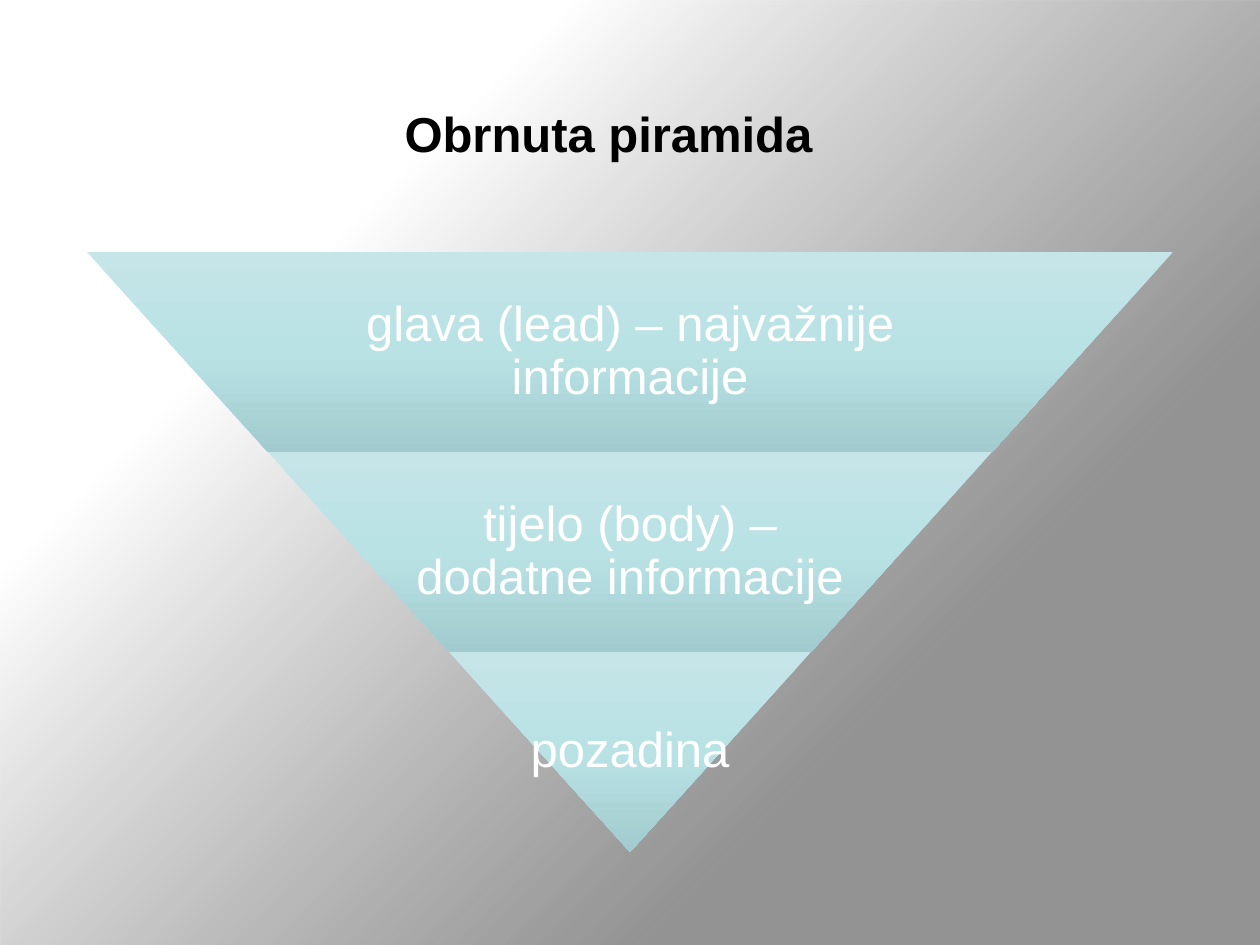
from lxml.etree import SubElement
from pptx import Presentation
from pptx.dml.color import RGBColor
from pptx.enum.shapes import MSO_SHAPE as Shape
from pptx.enum.text import MSO_ANCHOR as Anchor, MSO_AUTO_SIZE as AutoSize, PP_ALIGN as Align
from pptx.oxml.ns import qn
from pptx.util import Emu, Pt

COLORS = {
    "title": "000000",
    "label": "FFFFFF",
    "shade": "808080",
    "light": "FFFFFF",
    "band_top": "C5E5E8",
    "band_middle": "B9E2E5",
    "band_bottom": "A1CBCE",
}
WIDTH, HEIGHT = 1260, 945
BAND_TOP, BAND_HEIGHT, BAND_STEP = 252, 200, 181
BANDS = [
    ("glava (lead) – najvažnije informacije", 0.65),
    ("tijelo (body) – dodatne informacije", 0.65),
    ("pozadina", 1),
]


def px(length):
    return Emu(round(length * 914400 / 126))


class SlideBuilder:
    font = "Arial"
    size = Pt(28)

    def __init__(self, deck):
        self.slide = deck.slides.add_slide(deck.slide_layouts[5])

    def gradient(self, shape, stops):
        shape.shadow.inherit = False
        shape.line.fill.background()
        shape.fill.gradient()
        fill = shape._element.spPr.find(qn("a:gradFill"))
        for child in list(fill):
            fill.remove(child)
        stop_list = SubElement(fill, qn("a:gsLst"))
        for position, color, opacity in stops:
            stop = SubElement(stop_list, qn("a:gs"), pos=str(position * 1000))
            tone = SubElement(stop, qn("a:srgbClr"), val=COLORS[color])
            if opacity < 100:
                SubElement(tone, qn("a:alpha"), val=str(opacity * 1000))
        return fill

    def backdrop(self):
        panel = self.slide.shapes.add_shape(Shape.RECTANGLE, 0, 0, px(WIDTH), px(HEIGHT))
        fill = self.gradient(panel, [(28, "shade", 84), (74, "light", 100)])
        spread = SubElement(fill, qn("a:path"), path="circle")
        SubElement(spread, qn("a:fillToRect"), l="100000", t="100000")
        self.slide.shapes._spTree.insert(2, panel._element)

    def add_text(self, frame, text, color, align, bold=False):
        frame.word_wrap = True
        frame.auto_size = AutoSize.NONE
        frame.vertical_anchor = Anchor.MIDDLE
        paragraph = frame.paragraphs[0]
        paragraph.alignment = align
        paragraph.line_spacing = 0.9
        run = paragraph.add_run()
        run.text = text
        run.font.name = self.font
        run.font.size = self.size
        run.font.bold = bold
        run.font.color.rgb = RGBColor.from_string(COLORS[color])

    def title(self, text, left, top, width, height):
        heading = self.slide.shapes.title
        heading.left, heading.top = px(left), px(top)
        heading.width, heading.height = px(width), px(height)
        self.add_text(heading.text_frame, text, "title", Align.LEFT, bold=True)

    def band(self, pyramid, top, width):
        left = (WIDTH - width) / 2
        band = pyramid.shapes.add_shape(
            Shape.TRAPEZOID, px(left), px(top), px(width), px(BAND_HEIGHT))
        band.rotation = 180
        band.adjustments[0] = BAND_STEP / BAND_HEIGHT
        fill = self.gradient(
            band, [(0, "band_top", 100), (50, "band_middle", 100), (100, "band_bottom", 100)])
        fill.set("rotWithShape", "0")
        SubElement(fill, qn("a:lin"), ang="5400000", scaled="0")

    def label(self, pyramid, text, top, width):
        left = (WIDTH - width) / 2
        label = pyramid.shapes.add_textbox(px(left), px(top), px(width), px(BAND_HEIGHT))
        frame = label.text_frame
        frame.margin_left = frame.margin_right = px(5)
        frame.margin_top = frame.margin_bottom = px(5)
        self.add_text(frame, text, "label", Align.CENTER)

    def inverted_pyramid(self, bands):
        pyramid = self.slide.shapes.add_group_shape()
        for index, (text, label_share) in enumerate(bands):
            top = BAND_TOP + index * BAND_HEIGHT
            width = 2 * BAND_STEP * (len(bands) - index)
            self.band(pyramid, top, width)
            self.label(pyramid, text, top, width * label_share)


def main():
    deck = Presentation()
    deck.slide_width, deck.slide_height = px(WIDTH), px(HEIGHT)
    builder = SlideBuilder(deck)
    builder.backdrop()
    builder.title("Obrnuta piramida", 392, 45, 612, 183)
    builder.inverted_pyramid(BANDS)
    deck.save("out.pptx")


if __name__ == "__main__":
    main()
